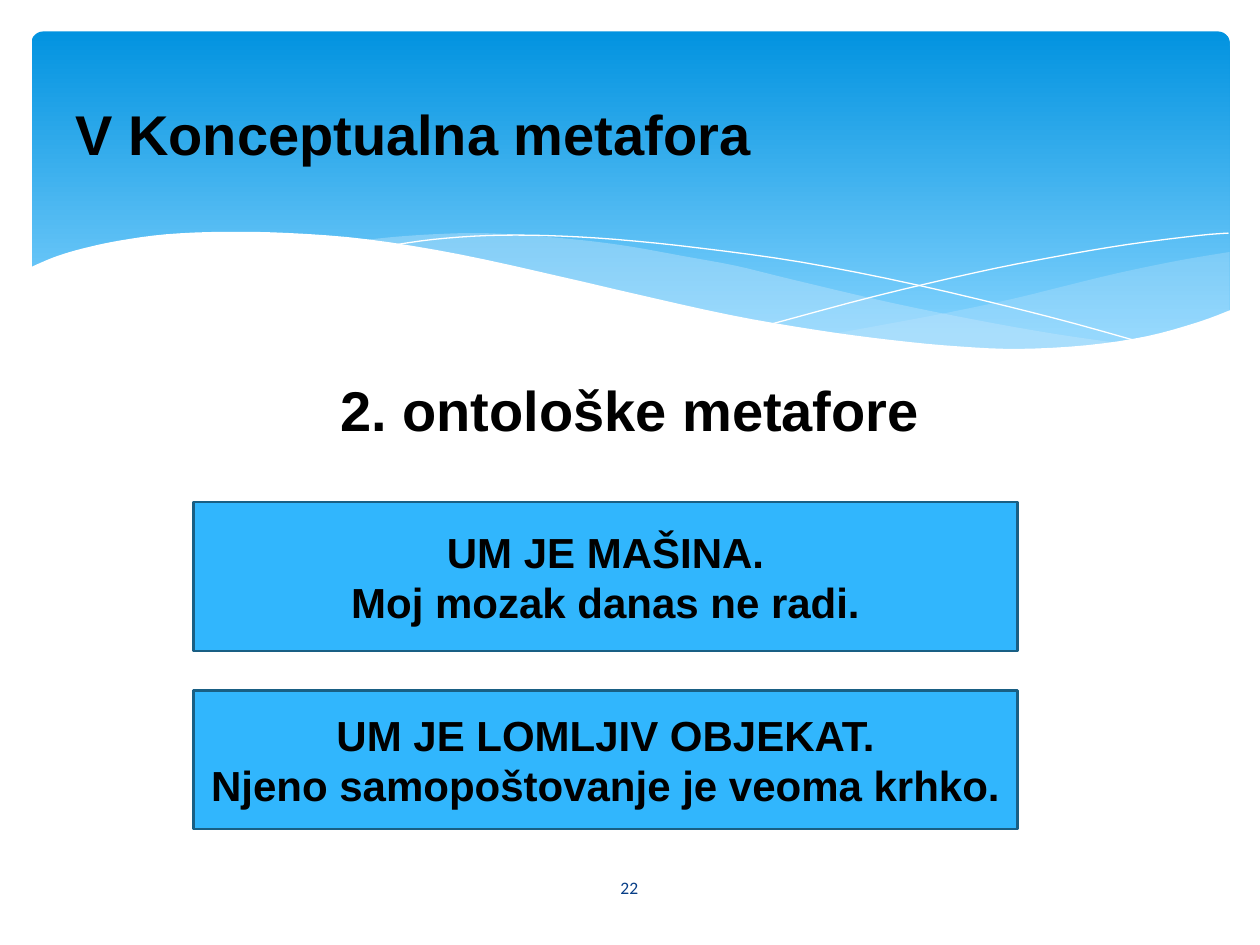
from dataclasses import dataclass

from lxml.etree import SubElement
from pptx import Presentation
from pptx.dml.color import RGBColor
from pptx.enum.shapes import MSO_SHAPE
from pptx.enum.text import MSO_ANCHOR, PP_ALIGN
from pptx.oxml.ns import qn
from pptx.util import Pt


@dataclass(frozen=True)
class Theme:
    black: str = "000000"
    white: str = "FFFFFF"
    deep: str = "0293E0"
    light: str = "83D3FE"
    mist: str = "C6E7FC"
    card: str = "31B6FD"
    edge: str = "195F84"
    navy: str = "073E87"
    font: str = "Arial"
    small: str = "Calibri"
    head: int = 32
    text: int = 24
    note: int = 10


THEME = Theme()

# Wave edges, in points from the banner's top left corner
RIGHT_TOP = [(684.7, 126), (655, 131), (623.5, 137.5), (602, 142.6),
             (561.6, 152.6), (524, 160.6), (490, 167), (458, 172.8)]
RIGHT_LOW = [(458, 172.8), (489.6, 177), (518.4, 180), (544, 181.4),
             (568, 182), (597, 180.7), (622, 177.8), (645, 172.8),
             (665, 167), (684.7, 159.8)]
MID_TOP = [(625, 178.6), (584.6, 172.8), (540, 164.9), (490.3, 154.8),
           (434.9, 141.8), (402.5, 133.9), (371.5, 128.2), (343.4, 123.1),
           (316.8, 119.5), (284.4, 116.6), (255.6, 115.2), (229.7, 115.9),
           (207.4, 117.4), (187.9, 119.5)]
MID_LOW = [(187.9, 119.5), (228.2, 125.3), (272.9, 133.9), (305.3, 141.8),
           (363.6, 154.8), (414.7, 165.6), (460.8, 173.5), (501.8, 179.3),
           (538.6, 181.4), (571, 182.2), (599, 181.4), (625, 178.6)]
FALL = [(204.5, 122.4), (229.7, 118.8), (260.6, 116.6), (293.8, 116.6),
        (334, 118.8), (382.3, 123.8), (439.9, 131.8), (505.4, 144.7),
        (580.3, 162.7), (635, 177.8)]
RISE = [(423.4, 167), (482.4, 151.2), (540.7, 137.5), (583.9, 128.9),
        (626.4, 121.7), (666.7, 116.6), (684, 115.2)]
FRONT = [(685.4, 159.1), (666, 166.3), (637.2, 174.2), (603, 179.3),
         (564.5, 181.4), (529.9, 180), (491.8, 176.4), (448.6, 170.6),
         (399, 162), (344.2, 149.8), (303.8, 140.4), (244.8, 127.4),
         (192.2, 118.8), (147.6, 115.2), (109.4, 114.5), (77, 115.9),
         (50.4, 119.5), (30.2, 123.8), (15.1, 128.2), (2.9, 133.2),
         (-1.4, 135.4)]
BASE = [(-1.4, 218.9), (685.4, 218.9)]


def rgb(code):
    return RGBColor.from_string(code)


def smooth(knots, steps=4):
    """Run a Catmull-Rom curve through the knots."""
    ends = [knots[0], *knots, knots[-1]]
    out = [knots[0]]
    for a, b, c, d in zip(ends, ends[1:], ends[2:], ends[3:]):
        for i in range(1, steps + 1):
            t = i / steps
            out.append(tuple(
                b[k] + t / 2 * (c[k] - a[k]
                                + t * (2 * a[k] - 5 * b[k] + 4 * c[k] - d[k]
                                       + t * (3 * (b[k] - c[k]) + d[k] - a[k])))
                for k in (0, 1)))
    return out


def trace(slide, left, top, dots, close=True):
    spots = [(Pt(left + x), Pt(top + y)) for x, y in dots]
    pen = slide.shapes.build_freeform(*spots[0])
    pen.add_line_segments(spots[1:], close=close)
    shape = pen.convert_to_shape()
    shape.shadow.inherit = False
    return shape


def wave(slide, left, top, dots, color, alpha=100):
    shape = trace(slide, left, top, dots)
    shape.fill.solid()
    shape.fill.fore_color.rgb = rgb(color)
    shape.line.fill.background()
    if alpha < 100:
        tint = shape.fill._xPr.find(".//" + qn("a:srgbClr"))
        SubElement(tint, qn("a:alpha"), val=str(alpha * 1000))


def strand(slide, left, top, dots):
    shape = trace(slide, left, top, dots, close=False)
    shape.fill.background()
    shape.line.color.rgb = rgb(THEME.white)
    shape.line.width = Pt(0)


def write(frame, lines, size, font=THEME.font, color=THEME.black, bold=True,
          align=PP_ALIGN.CENTER, anchor=MSO_ANCHOR.MIDDLE):
    frame.word_wrap = True
    frame.vertical_anchor = anchor
    for i, line in enumerate(lines):
        para = frame.add_paragraph() if i else frame.paragraphs[0]
        para.alignment = align
        run = para.add_run()
        run.text = line
        run.font.size = Pt(size)
        run.font.name = font
        run.font.bold = bold
        run.font.color.rgb = rgb(color)


def label(slide, box, line, size, **style):
    frame = slide.shapes.add_textbox(*map(Pt, box)).text_frame
    write(frame, [line], size, **style)


def banner(slide, box):
    left, top = box[:2]
    # Gradient panel
    panel = slide.shapes.add_shape(MSO_SHAPE.ROUNDED_RECTANGLE, *map(Pt, box))
    panel.adjustments[0] = 0.034
    panel.shadow.inherit = False
    panel.line.fill.background()
    panel.fill.gradient()
    panel.fill.gradient_angle = 270
    stops = panel.fill.gradient_stops
    for stop, place, color in zip(stops, (0, 0.9), (THEME.deep, THEME.light)):
        stop.position = place
        stop.color.rgb = rgb(color)
    # Waves, back to front
    wave(slide, left, top, smooth(RIGHT_TOP) + smooth(RIGHT_LOW), THEME.mist, 29)
    wave(slide, left, top, smooth(MID_TOP) + smooth(MID_LOW), THEME.mist, 40)
    for line in (FALL, RISE):
        strand(slide, left, top, smooth(line))
    wave(slide, left, top, smooth(FRONT) + BASE, THEME.white)


def card(slide, box, lines):
    shape = slide.shapes.add_shape(MSO_SHAPE.RECTANGLE, *map(Pt, box))
    shape.shadow.inherit = False
    shape.fill.solid()
    shape.fill.fore_color.rgb = rgb(THEME.card)
    shape.line.color.rgb = rgb(THEME.edge)
    shape.line.width = Pt(1.25)
    write(shape.text_frame, lines, THEME.text)


def main():
    deck = Presentation()
    deck.slide_width, deck.slide_height = Pt(720), Pt(540)
    slide = deck.slides.add_slide(deck.slide_layouts[6])

    banner(slide, (18, 18, 684.7, 194.4))
    # Heading, subheading and page number
    label(slide, (36, 26.6, 648, 98.6), "V Konceptualna metafora",
          THEME.head, align=PP_ALIGN.LEFT)
    label(slide, (68.4, 211, 583.2, 271.4), "2. ontološke metafore",
          THEME.head, anchor=MSO_ANCHOR.TOP)
    label(slide, (313.9, 492.5, 91.4, 28.8), "22", THEME.note,
          font=THEME.small, color=THEME.navy, bold=False)
    # Example cards
    card(slide, (110.6, 287, 470.9, 85),
         ["UM JE MAŠINA.", "Moj mozak danas ne radi."])
    card(slide, (110.6, 394.6, 470.9, 79.2),
         ["UM JE LOMLJIV OBJEKAT.", "Njeno samopoštovanje je veoma krhko."])
    deck.save("out.pptx")


if __name__ == "__main__":
    main()
